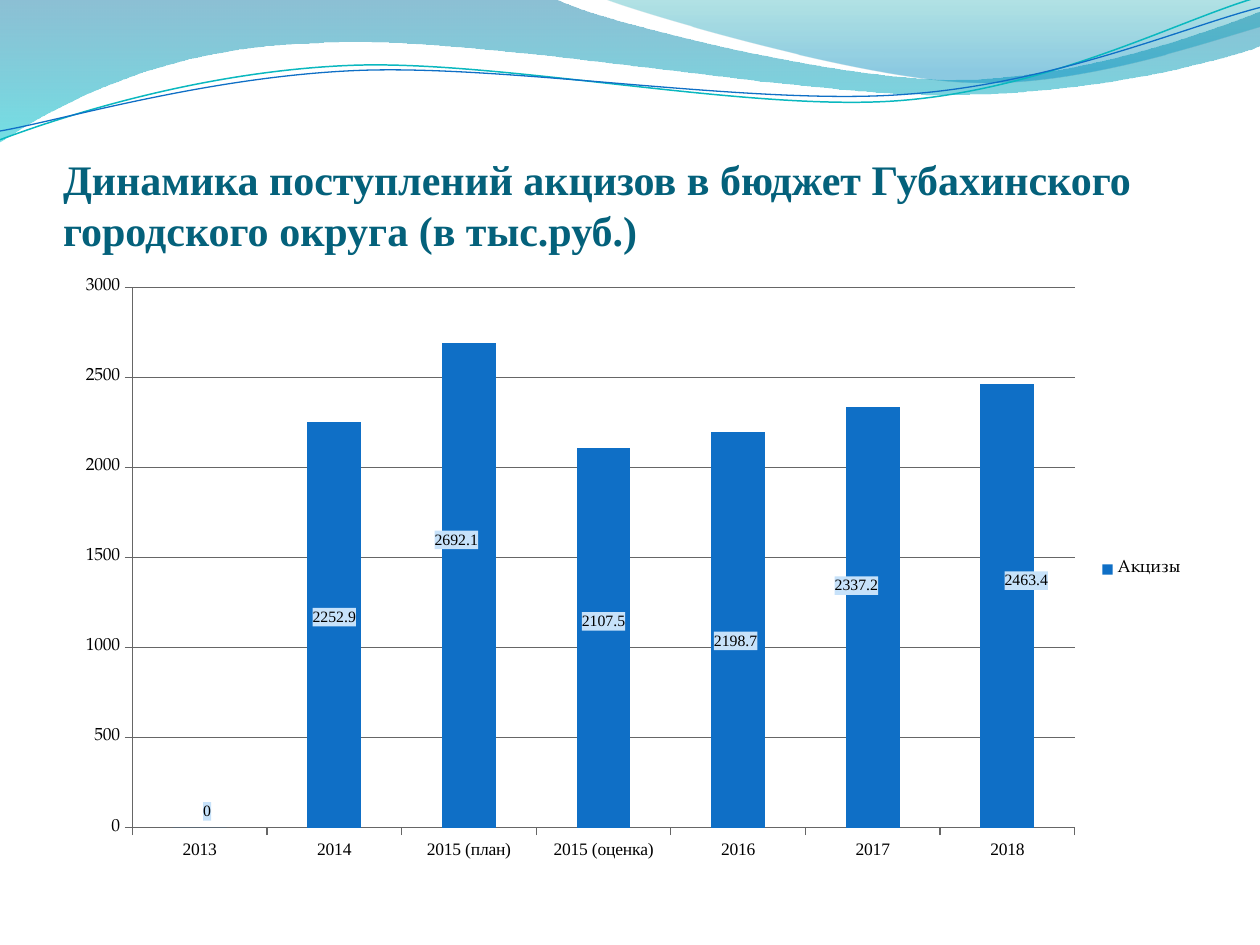
from math import cos, radians, sin

from lxml import etree
from pptx import Presentation
from pptx.chart.data import CategoryChartData
from pptx.dml.color import RGBColor
from pptx.enum.chart import XL_CHART_TYPE, XL_LABEL_POSITION, XL_LEGEND_POSITION, XL_TICK_MARK
from pptx.enum.text import MSO_ANCHOR, PP_ALIGN
from pptx.oxml import parse_xml
from pptx.oxml.ns import nsdecls, qn
from pptx.util import Inches, Pt

STACKED = XL_CHART_TYPE.COLUMN_STACKED
CENTER = XL_LABEL_POSITION.CENTER
RIGHT = XL_LEGEND_POSITION.RIGHT
OUTSIDE = XL_TICK_MARK.OUTSIDE
BOTTOM = MSO_ANCHOR.BOTTOM
LEFT = PP_ALIGN.LEFT
SERIF = "Times New Roman"
PAGELLA = "TeX Gyre Pagella"
CHART_WIDTH, CHART_HEIGHT = 9, 4.8
TILT = 2.7


def color(value):
    return RGBColor.from_string(value)


def add_outline(shapes, start, segments, close):
    """Draw lines (1 point) and cubic curves (3 points) from a start point."""
    builder = shapes.build_freeform(Inches(start[0]), Inches(start[1]))
    points = [point for segment in segments for point in segment]
    builder.add_line_segments([(Inches(x), Inches(y)) for x, y in points], close=close)
    shape = builder.convert_to_shape()
    shape.shadow.inherit = False
    steps = list(shape._element.iter(qn("a:lnTo")))
    for segment in segments:
        used, steps = steps[:len(segment)], steps[len(segment):]
        if len(segment) == 3:
            bend = etree.Element(qn("a:cubicBezTo"))
            used[0].addprevious(bend)
            for step in used:
                bend.append(step[0])
                step.getparent().remove(step)
    return shape


deck = Presentation()
deck.slide_width, deck.slide_height = Inches(10), Inches(7.5)
page = deck.slides.add_slide(deck.slide_layouts[5])
page.background.fill.solid()
page.background.fill.fore_color.rgb = color("FFFFFF")

# Header waves: start, segments, gradient stops (position, colour, opacity in %)
waves = [
    ((0, 0),
     [[(4.4, -0.01)], [(4.76, 0.17), (6.64, 0.63), (7.58, 0.63)],
      [(8.53, 0.63), (9.58, 0.26), (10, 0.09)], [(10.01, 0.36)],
      [(9.83, 0.44), (8.7, 0.76), (7.46, 0.75)], [(6.22, 0.75), (3.82, 0.28), (2.57, 0.34)],
      [(1.29, 0.36), (0.46, 0.83), (-0.01, 1.13)], [(0, 0)]],
     [(0, "0074A1", 45), (1, "00C6CF", 55)]),
    ((4.79, -0.01),
     [[(5.09, 0.11), (6.82, 0.62), (7.69, 0.65)], [(8.56, 0.69), (9.61, 0.32), (10, 0.21)],
      [(10, 0)], [(4.79, -0.01)]],
     [(0, "00A1A9", 30), (0.8, "008BBF", 45)]),
]
for start, segments, stops in waves:
    wave = add_outline(page.shapes, start, segments, True)
    wave.line.fill.background()
    wave.fill.gradient()
    wave.fill.gradient_angle = 270
    for stop, (position, tint, opacity) in zip(wave.fill.gradient_stops, stops):
        stop.position = position
        stop.color.rgb = color(tint)
    for tint_node, (position, tint, opacity) in zip(wave._element.iter(qn("a:srgbClr")), stops):
        etree.SubElement(tint_node, qn("a:alpha")).set("val", str(opacity * 1000))

# Thin header curves, laid level around their middle and then tilted
curves = [
    ([(0, 1.11), (0.48, 0.93), (1.58, 0.57), (2.77, 0.52), (3.95, 0.47), (5.93, 0.89),
      (7.13, 0.8), (8.33, 0.71), (9.38, 0.15), (9.98, -0.02)], 0.58, "0AB8BF", 0.85),
    ([(0, 1.04), (0.47, 0.96), (1.64, 0.61), (2.83, 0.56), (4.03, 0.51), (5.97, 0.84),
      (7.17, 0.75), (8.36, 0.67), (9.41, 0.21), (10, 0.06)], 0.59, "0F6FC6", 0.75),
]
turn_cos, turn_sin = cos(radians(TILT)), sin(radians(TILT))
for points, middle, tint, width in curves:
    level = [(5 + (x - 5) * turn_cos - (y - middle) * turn_sin,
              middle + (x - 5) * turn_sin + (y - middle) * turn_cos) for x, y in points]
    segments = [level[first:first + 3] for first in range(1, len(level), 3)]
    curve = add_outline(page.shapes, level[0], segments, False)
    curve.rotation = 360 - TILT
    curve.fill.background()
    curve.line.color.rgb = color(tint)
    curve.line.width = Pt(width)

# Title, in front of the waves
title = page.shapes.title
page.shapes._spTree.append(title._element)
title.left, title.top, title.width, title.height = (Inches(n) for n in (0.5, 0.77, 9, 1.25))
frame = title.text_frame
frame.word_wrap = True
frame.vertical_anchor = BOTTOM
frame.margin_left = frame.margin_right = frame.margin_bottom = 0
frame.margin_top = Inches(0.05)
para = frame.paragraphs[0]
para.alignment = LEFT
span = para.add_run()
span.text = "Динамика поступлений акцизов в бюджет Губахинского городского округа (в тыс.руб.)"
span.font.name, span.font.size, span.font.bold = SERIF, Pt(24), True
span.font.color.rgb = color("04617B")

# Chart
data = CategoryChartData()
data.categories = ["2013", "2014", "2015 (план)", "2015 (оценка)", "2016", "2017", "2018"]
data.add_series("Акцизы", [0, 2252.9, 2692.1, 2107.5, 2198.7, 2337.2, 2463.4])
chart = page.shapes.add_chart(STACKED, Inches(0.5), Inches(2.12), Inches(CHART_WIDTH),
                              Inches(CHART_HEIGHT), data).chart
chart.has_title = False
chart.font.name, chart.font.size = PAGELLA, Pt(10)
chart.font.color.rgb = color("000000")
chart.has_legend = True
chart.legend.position = RIGHT
chart.legend.include_in_layout = False

# Plot area
layout = parse_xml(
    f'<c:layout {nsdecls("c")}><c:manualLayout><c:layoutTarget val="inner"/>'
    f'<c:xMode val="edge"/><c:yMode val="edge"/><c:x val="{0.55 / CHART_WIDTH}"/>'
    f'<c:y val="{0.16 / CHART_HEIGHT}"/><c:w val="{7.48 / CHART_WIDTH}"/>'
    f'<c:h val="{4.29 / CHART_HEIGHT}"/></c:manualLayout></c:layout>')
plot_area = chart._chartSpace.chart.plotArea
for old_layout in plot_area.findall(qn("c:layout")):
    plot_area.remove(old_layout)
plot_area.insert(0, layout)

# Axes
for axis in (chart.category_axis, chart.value_axis):
    axis.major_tick_mark = OUTSIDE
    axis.format.line.color.rgb = color("666666")
chart.category_axis.tick_labels.font.name = SERIF
chart.category_axis.tick_labels.font.size = Pt(10)
values = chart.value_axis
values.minimum_scale, values.maximum_scale, values.major_unit = 0, 3000, 500
values.has_major_gridlines = True
values.major_gridlines.format.line.color.rgb = color("666666")

# Bars
plot = chart.plots[0]
plot.vary_by_categories = False
plot.gap_width, plot.overlap = 150, 100
series = plot.series[0]
series.format.fill.solid()
series.format.fill.fore_color.rgb = color("0F6FC6")

# Value labels, each shifted in inches from the middle of its bar, without leader lines
labels = series.data_labels
labels.show_value = True
labels.position = CENTER
labels.font.name, labels.font.size = SERIF, Pt(9)
shifts = [(0.06, -0.13), (0, -0.06), (-0.1, -0.36), (0, -0.13),
          (-0.02, 0.09), (-0.13, -0.25), (0.15, -0.2)]
for index in range(len(shifts)):
    label = series.points[index].data_label
    label.position = CENTER
    label.font.name, label.font.size = SERIF, Pt(9)
for node, (across, down) in zip(series._element.iter(qn("c:dLbl")), shifts):
    for old_part in node.findall(qn("c:spPr")):
        node.remove(old_part)
    node.insert(1, parse_xml(
        f'<c:layout {nsdecls("c")}><c:manualLayout><c:x val="{across / CHART_WIDTH}"/>'
        f'<c:y val="{down / CHART_HEIGHT}"/></c:manualLayout></c:layout>'))
    node.insert(2, parse_xml(
        f'<c:spPr {nsdecls("c", "a")}><a:solidFill><a:srgbClr val="C7E2FA"/></a:solidFill></c:spPr>'))
for leader in series._element.iter(qn("c:showLeaderLines")):
    leader.set("val", "0")

deck.save("out.pptx")
